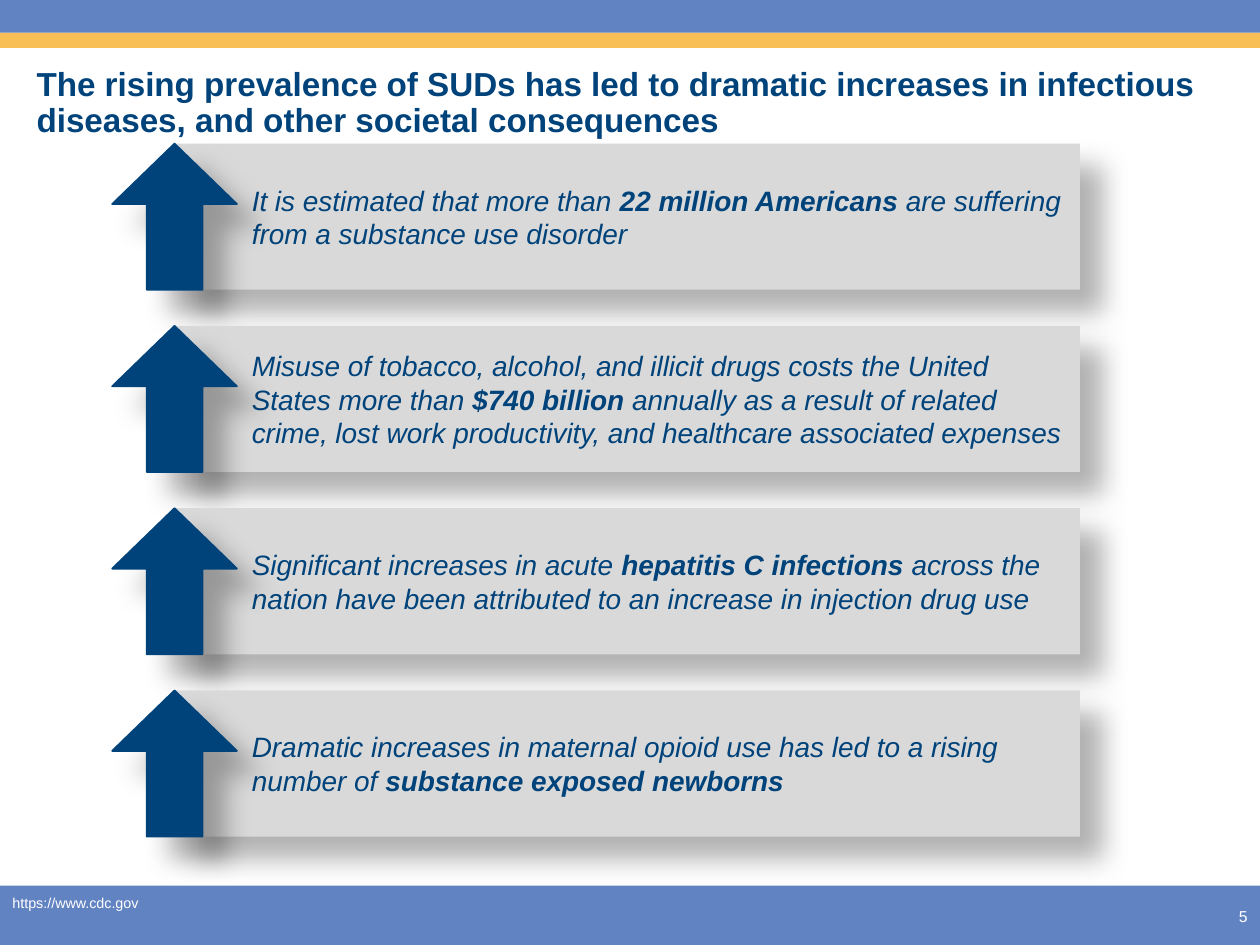
from lxml import etree
from pptx import Presentation
from pptx.dml.color import RGBColor
from pptx.enum import shapes, text
from pptx.oxml import ns
from pptx.util import Inches, Pt

NAVY = RGBColor(0x00, 0x43, 0x7B)
BLUE = RGBColor(0x62, 0x83, 0xC2)
GOLD = RGBColor(0xF8, 0xBF, 0x56)
GRAY = RGBColor(0xD9, 0xD9, 0xD9)
WHITE = RGBColor(0xFF, 0xFF, 0xFF)

TITLE = ("The rising prevalence of SUDs has led to dramatic increases in "
         "infectious diseases, and other societal consequences")
# Each fact: text before the emphasis, emphasis, text after it
FACTS = [
    ("It is estimated that more than ", "22 million Americans ",
     "are suffering from a substance use disorder"),
    ("Misuse of tobacco, alcohol, and illicit drugs costs the United States more than ",
     "$740 billion ",
     "annually as a result of related crime, lost work productivity, "
     "and healthcare associated expenses"),
    ("Significant increases in acute ", "hepatitis C infections ",
     "across the nation have been attributed to an increase in injection drug use"),
    ("Dramatic increases in maternal opioid use has led to a rising number of ",
     "substance exposed newborns", ""),
]


def add_run(p, words, size, color, bold=False, italic=False):
    r = p.add_run()
    r.text = words
    r.font.name = "Arial"
    r.font.size = Pt(size)
    r.font.color.rgb = color
    r.font.bold = bold
    r.font.italic = italic


def add_block(s, kind, box, fill, line=None):
    sp = s.shapes.add_shape(kind, *map(Inches, box))
    sp.fill.solid()
    sp.fill.fore_color.rgb = fill
    if line is None:
        sp.line.fill.background()
    else:
        sp.line.color.rgb = line
        sp.line.width = Pt(1)
    sp.shadow.inherit = False
    return sp


def add_shadow(sp):
    effects = sp._element.spPr.find(ns.qn("a:effectLst"))
    shadow = etree.SubElement(
        effects, ns.qn("a:outerShdw"), blurRad=str(Pt(15)), dist=str(Pt(18)),
        dir=str(45 * 60000), algn="tl", rotWithShape="0")
    color = etree.SubElement(shadow, ns.qn("a:srgbClr"), val="000000")
    etree.SubElement(color, ns.qn("a:alpha"), val="30000")


def add_label(s, box, words, size, align=text.PP_ALIGN.LEFT):
    tf = s.shapes.add_textbox(*map(Inches, box)).text_frame
    tf.word_wrap = True
    tf.auto_size = text.MSO_AUTO_SIZE.SHAPE_TO_FIT_TEXT
    p = tf.paragraphs[0]
    p.alignment = align
    add_run(p, words, size, WHITE)


def add_bands(s):
    for top, height, color in [(7.03, 0.47, BLUE), (0.26, 0.12, GOLD), (0, 0.26, BLUE)]:
        add_block(s, shapes.MSO_SHAPE.RECTANGLE, (0, top, 10, height), color)


def add_title(s, box):
    title = s.shapes.title
    title.left, title.top, title.width, title.height = map(Inches, box)
    tf = title.text_frame
    tf.word_wrap = True
    tf.auto_size = text.MSO_AUTO_SIZE.NONE
    tf.vertical_anchor = text.MSO_ANCHOR.MIDDLE
    p = tf.paragraphs[0]
    p.alignment = text.PP_ALIGN.LEFT
    p.line_spacing = 0.9
    p.space_before = Pt(0)
    add_run(p, TITLE, 19, NAVY, bold=True)


def add_fact(s, box, parts):
    left, top, width, height = box
    # Panel with the statement
    panel = add_block(s, shapes.MSO_SHAPE.RECTANGLE,
                      (left + 0.5, top, width - 0.5, height), GRAY)
    add_shadow(panel)
    tf = panel.text_frame
    tf.word_wrap = True
    tf.vertical_anchor = text.MSO_ANCHOR.MIDDLE
    p = tf.paragraphs[0]
    p.alignment = text.PP_ALIGN.LEFT
    pPr = p._p.get_or_add_pPr()
    pPr.set("marL", str(Inches(0.51)))
    pPr.set("indent", "0")
    for words, bold in zip(parts, (False, True, False)):
        if words:
            add_run(p, words, 16, NAVY, bold=bold, italic=True)

    # Rising arrow over the panel's left edge
    arrow = add_block(s, shapes.MSO_SHAPE.UP_ARROW, (left, top, 0.99, height), NAVY, NAVY)
    arrow.adjustments[0] = 0.447
    arrow.adjustments[1] = 0.485
    add_shadow(arrow)


def add_facts(s, box):
    left, top, width, height = box
    row_height = 1.16
    pitch = (height - row_height) / (len(FACTS) - 1)
    for i, parts in enumerate(FACTS):
        add_fact(s, (left, top + i * pitch, width, row_height), parts)


def main():
    prs = Presentation()
    prs.slide_width, prs.slide_height = Inches(10), Inches(7.5)
    s = prs.slides.add_slide(prs.slide_layouts[5])
    add_bands(s)
    add_title(s, (0.19, 0.47, 9.57, 0.71))
    add_facts(s, (0.89, 1.14, 7.68, 5.5))
    # Footer: page number and source
    add_label(s, (9.31, 7.15, 0.69, 0.25), "5", 9, text.PP_ALIGN.RIGHT)
    add_label(s, (0, 7.05, 5.95, 0.24), "https://www.cdc.gov", 8.2)
    prs.save("out.pptx")


if __name__ == "__main__":
    main()
